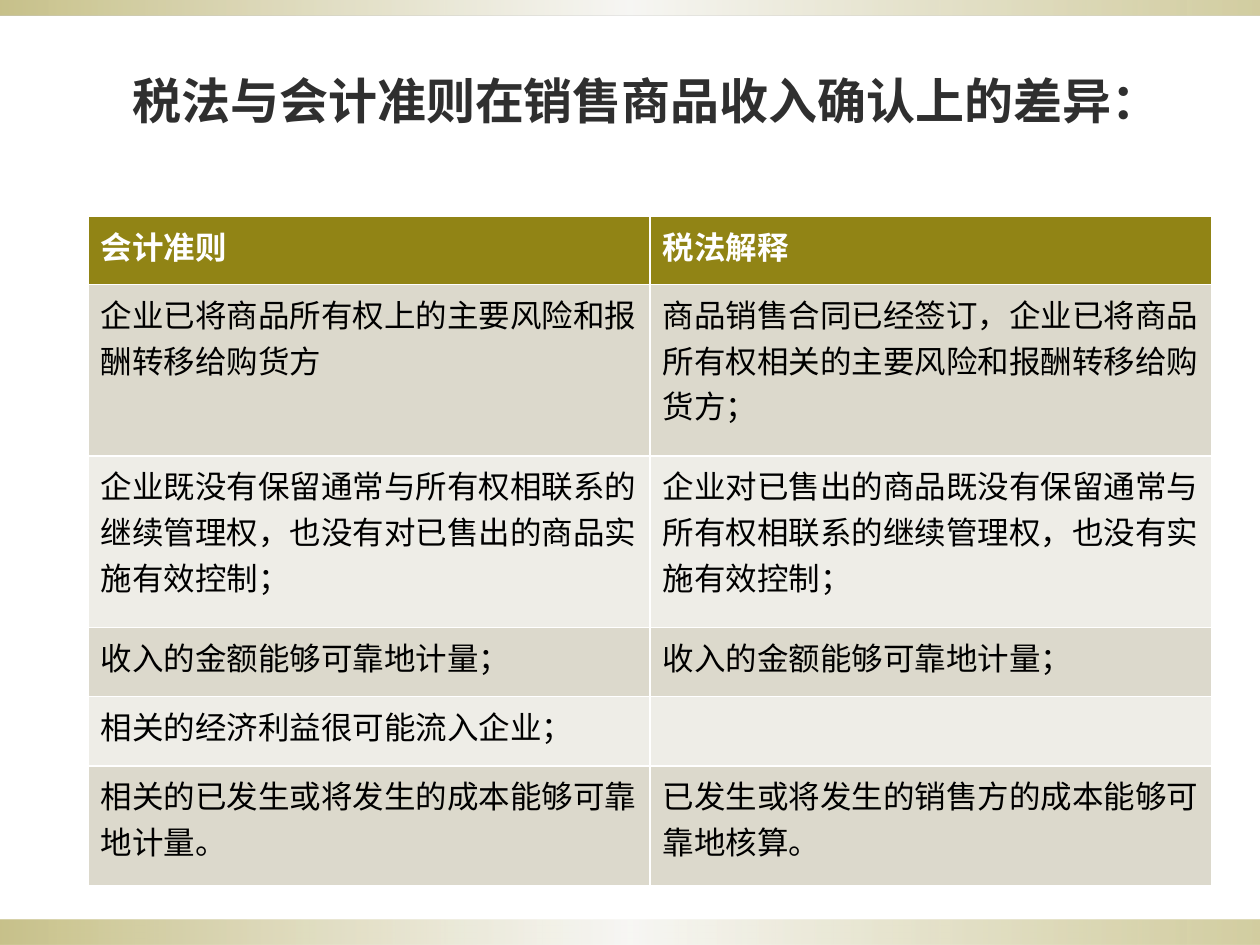
from lxml.etree import SubElement
from pptx import Presentation
from pptx.dml.color import RGBColor
from pptx.enum.text import MSO_ANCHOR, MSO_AUTO_SIZE, PP_ALIGN
from pptx.enum.shapes import MSO_SHAPE
from pptx.oxml.ns import qn
from pptx.util import Inches, Pt

WIDTH, HEIGHT = Inches(10), Inches(7.5)
FONT = "Cabin"
OLIVE = RGBColor(0x91, 0x84, 0x15)
SAND = RGBColor(0xDC, 0xD9, 0xCC)
PALE = RGBColor(0xEE, 0xED, 0xE7)
CHARCOAL = RGBColor(0x2F, 0x2F, 0x2F)
WHITE = RGBColor(0xFF, 0xFF, 0xFF)
BLACK = RGBColor(0x00, 0x00, 0x00)

BAND_STOPS = [(0, OLIVE, 50), (50, PALE, 45), (100, OLIVE, 40)]
ROW_HEIGHTS = [0.54, 1.36, 1.36, 0.55, 0.55, 0.95]
COMPARISON = [
    ("会计准则", "税法解释"),
    ("企业已将商品所有权上的主要风险和报酬转移给购货方",
     "商品销售合同已经签订，企业已将商品所有权相关的主要风险和报酬转移给购货方；"),
    ("企业既没有保留通常与所有权相联系的继续管理权，也没有对已售出的商品实施有效控制；",
     "企业对已售出的商品既没有保留通常与所有权相联系的继续管理权，也没有实施有效控制；"),
    ("收入的金额能够可靠地计量；", "收入的金额能够可靠地计量；"),
    ("相关的经济利益很可能流入企业；", ""),
    ("相关的已发生或将发生的成本能够可靠地计量。",
     "已发生或将发生的销售方的成本能够可靠地核算。"),
]


def style(paragraph, size, color, bold):
    """Set the font of a whole paragraph."""
    font = paragraph.font
    font.name, font.size, font.bold = FONT, Pt(size), bold
    font.color.rgb = color


def add_band(slide, box):
    """Draw a translucent horizontal gradient band in the box."""
    band = slide.shapes.add_shape(MSO_SHAPE.RECTANGLE, *box)
    band.shadow.inherit = False
    band.line.fill.background()
    band.fill.gradient()
    band.fill.gradient_angle = 0
    stops = band.element.spPr.find(qn("a:gradFill")).find(qn("a:gsLst"))
    for old_stop in list(stops):
        stops.remove(old_stop)
    for position, color, opacity in BAND_STOPS:
        stop = SubElement(stops, qn("a:gs"), pos=str(position * 1000))
        shade = SubElement(stop, qn("a:srgbClr"), val=str(color))
        SubElement(shade, qn("a:alpha"), val=str(opacity * 1000))


def add_title(slide, box, wording):
    """Place the centred heading in the title placeholder."""
    title = slide.shapes.title
    title.left, title.top, title.width, title.height = box
    frame = title.text_frame
    frame.text = wording
    frame.word_wrap = True
    frame.auto_size = MSO_AUTO_SIZE.NONE
    frame.vertical_anchor = MSO_ANCHOR.MIDDLE
    heading = frame.paragraphs[0]
    heading.alignment = PP_ALIGN.CENTER
    style(heading, 28, CHARCOAL, True)


def add_comparison(slide, box):
    """Fill the box with the two-column comparison table."""
    table = slide.shapes.add_table(len(COMPARISON), 2, *box).table
    for row, (height, entries) in enumerate(zip(ROW_HEIGHTS, COMPARISON)):
        table.rows[row].height = int(box[3] * height / sum(ROW_HEIGHTS))
        header = row == 0
        shade = OLIVE if header else (PALE, SAND)[row % 2]
        for column, wording in enumerate(entries):
            cell = table.cell(row, column)
            cell.text = wording
            cell.fill.solid()
            cell.fill.fore_color.rgb = shade
            style(cell.text_frame.paragraphs[0], 18,
                  WHITE if header else BLACK, header)


def main():
    """Build and save the slide."""
    deck = Presentation()
    deck.slide_width, deck.slide_height = WIDTH, HEIGHT
    slide = deck.slides.add_slide(deck.slide_layouts[5])
    add_band(slide, (0, Inches(7.3), WIDTH, Inches(0.2)))
    add_band(slide, (0, 0, WIDTH, Inches(0.12)))
    add_title(slide, (Inches(0.67), Inches(0.25), Inches(8.92), Inches(1.08)),
              "税法与会计准则在销售商品收入确认上的差异：")
    add_comparison(slide, (Inches(0.7), Inches(1.72), Inches(8.92), Inches(5.31)))
    deck.save("out.pptx")


if __name__ == "__main__":
    main()
